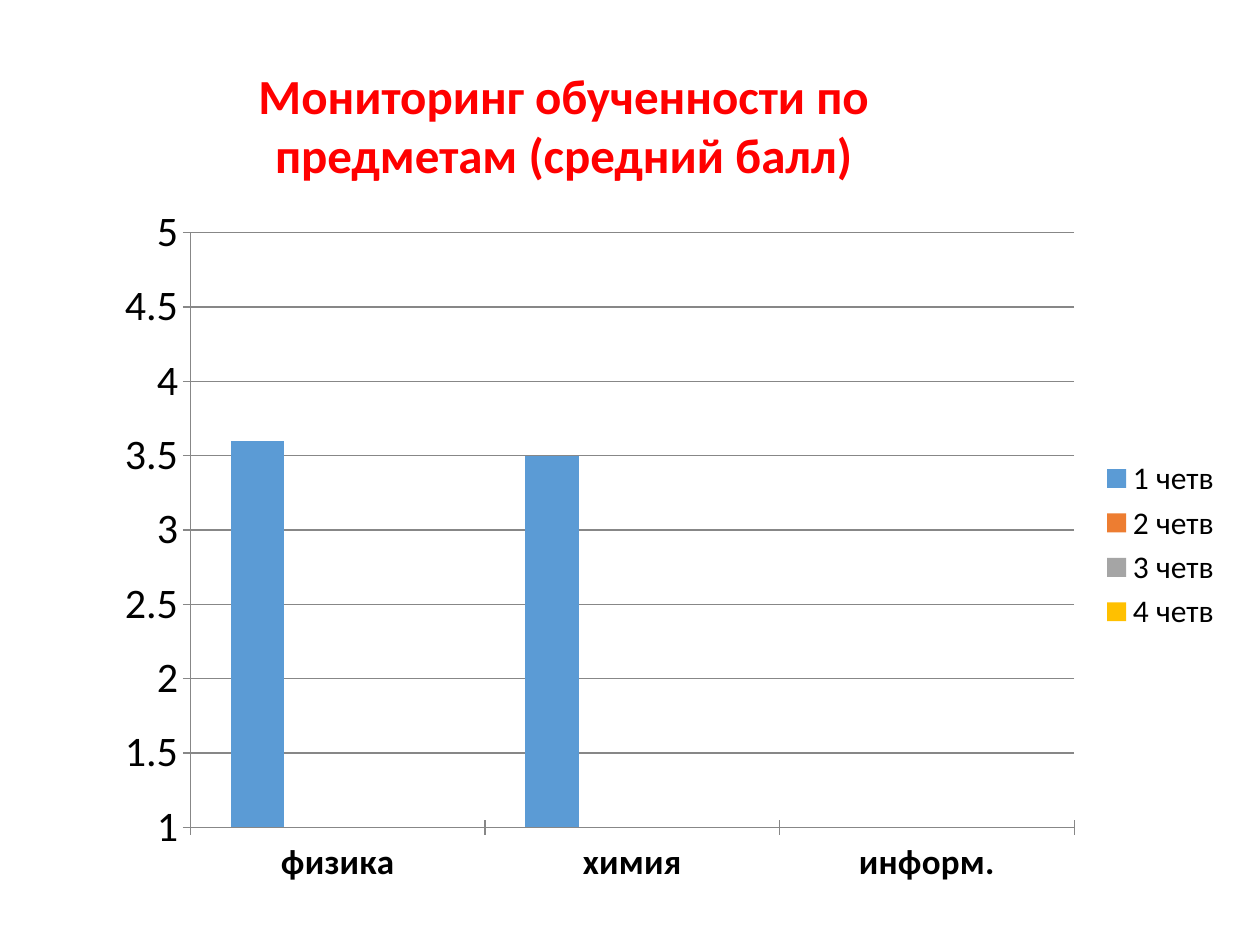
from pptx import Presentation
from pptx import util as u
from pptx.chart.data import CategoryChartData
from pptx.dml.color import RGBColor
from pptx.enum import chart as ch, text

HEADING = "Мониторинг обученности по предметам (средний балл)"
SUBJECTS = ["физика", "химия", "информ."]
QUARTERS = [
    ("1 четв", [3.6, 3.5, None], "5B9BD5"),
    ("2 четв", [None] * 3, "ED7D31"),
    ("3 четв", [None] * 3, "A5A5A5"),
    ("4 четв", [None] * 3, "FFC000"),
]
HEADING_AREA = (2.51, 1.19, 17.7, 2.64)
CHART_AREA = (2.06, 3.89, 22.83, 14.2)
SCORE_SCALE = {
    "minimum_scale": 1,
    "maximum_scale": 5,
    "major_unit": 0.5,
    "has_major_gridlines": True,
}


def paint(part, colour):
    part.rgb = RGBColor.from_string(colour)


def assign(target, values):
    for key, value in values.items():
        setattr(target, key, value)


def style_font(font, size, colour, bold=False):
    assign(font, {"name": "Calibri", "size": u.Pt(size), "bold": bold})
    paint(font.color, colour)


def style_line(line):
    line.width = u.Pt(0.75)
    paint(line.color, "878787")


def add_heading(slide):
    heading = slide.shapes.title
    sides = ("left", "top", "width", "height")
    assign(heading, dict(zip(sides, map(u.Cm, HEADING_AREA))))
    frame = heading.text_frame
    assign(frame, {
        "text": HEADING,
        "word_wrap": True,
        "auto_size": text.MSO_AUTO_SIZE.SHAPE_TO_FIT_TEXT,
    })
    line = frame.paragraphs[0]
    line.alignment = text.PP_ALIGN.CENTER
    style_font(line.runs[0].font, 28, "FF0000", True)


def add_scores(slide):
    scores = CategoryChartData()
    scores.categories = SUBJECTS
    for name, values, _ in QUARTERS:
        scores.add_series(name, values)
    chart = slide.shapes.add_chart(
        ch.XL_CHART_TYPE.COLUMN_CLUSTERED, *map(u.Cm, CHART_AREA), scores
    ).chart
    style_font(chart.font, 18, "000000")
    assign(chart, {"has_title": False, "has_legend": True})
    assign(chart.legend, {
        "position": ch.XL_LEGEND_POSITION.RIGHT,
        "include_in_layout": False,
    })

    plot = chart.plots[0]
    assign(plot, {"gap_width": 150, "overlap": 0, "vary_by_categories": False})
    for quarter, (_, _, colour) in zip(plot.series, QUARTERS):
        quarter.format.fill.solid()
        paint(quarter.format.fill.fore_color, colour)
    plot.series[-1].data_labels.show_value = True

    assign(chart.value_axis, SCORE_SCALE)
    style_line(chart.value_axis.major_gridlines.format.line)
    for axis, size, bold in (
        (chart.category_axis, 20, True),
        (chart.value_axis, 24, False),
    ):
        axis.major_tick_mark = ch.XL_TICK_MARK.CROSS
        style_font(axis.tick_labels.font, size, "000000", bold)
        style_line(axis.format.line)


def main():
    deck = Presentation()
    assign(deck, {"slide_width": u.Cm(25.4), "slide_height": u.Cm(19.05)})
    slide = deck.slides.add_slide(deck.slide_layouts.get_by_name("Title Only"))
    add_scores(slide)
    add_heading(slide)
    deck.save("out.pptx")


if __name__ == "__main__":
    main()
